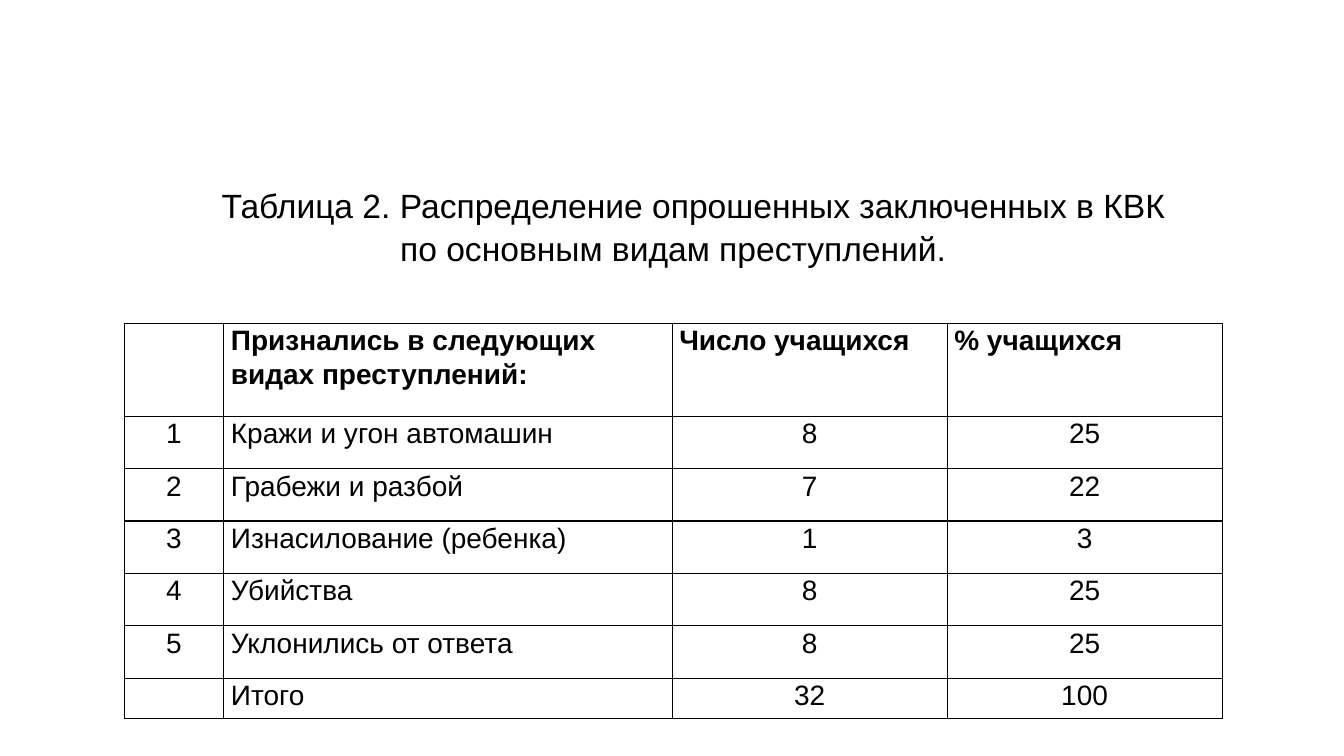
from lxml import etree
from pptx import Presentation
from pptx.dml.color import RGBColor
from pptx.enum.text import MSO_ANCHOR, PP_ALIGN
from pptx.oxml.ns import qn
from pptx.util import Cm, Pt

LEFT, CENTER = PP_ALIGN.LEFT, PP_ALIGN.CENTER
TOP = MSO_ANCHOR.TOP

# Content
TITLE = ("Таблица 2. Распределение опрошенных заключенных в КВК \v"
         "по основным видам преступлений.")
HEADER = ("", "Признались в следующих видах преступлений:",
          "Число учащихся", "% учащихся")
CRIMES = [
    ("1", "Кражи и угон автомашин", "8", "25"),
    ("2", "Грабежи и разбой", "7", "22"),
    ("3", "Изнасилование (ребенка)", "1", "3"),
    ("4", "Убийства", "8", "25"),
    ("5", "Уклонились от ответа", "8", "25"),
]
TOTAL = ("", "Итого", "32", "100")

THEME = {
    "font": "Arial",
    "ink": "000000",
    "title_size": 24,
    "table_size": 20,
    "border": 1,
    "line_spacing": 1.07,
}

# Layout in centimetres
SLIDE_SIZE = (33.87, 19.05)
TITLE_BOX = (2.36, 4.47, 29.21, 3.33)
TITLE_INDENT = 1.25
TABLE_ORIGIN = (3.13, 8.15)
COLUMN_WIDTHS = (2.51, 11.3, 6.93, 6.93)
ROW_HEIGHTS = (2.34, *[1.32] * len(CRIMES), 1.02)
CELL_MARGIN = 0.18


def write(frame, text, *, size, bold=False, align=LEFT, indent=0):
    paragraph = frame.paragraphs[0]
    paragraph.text = text
    paragraph.alignment = align
    paragraph.line_spacing = THEME["line_spacing"]
    if indent:
        paragraph._p.get_or_add_pPr().set("indent", str(Cm(indent)))
    for font in [paragraph.font, *(run.font for run in paragraph.runs)]:
        font.name = THEME["font"]
        font.size = Pt(size)
        font.bold = bold
        font.color.rgb = RGBColor.from_string(THEME["ink"])


def outline(cell):
    properties = cell._tc.get_or_add_tcPr()
    for side in ("a:lnL", "a:lnR", "a:lnT", "a:lnB"):
        line = etree.SubElement(properties, qn(side), w=str(Pt(THEME["border"])))
        fill = etree.SubElement(line, qn("a:solidFill"))
        etree.SubElement(fill, qn("a:srgbClr"), val=THEME["ink"])


def add_title(slide):
    frame = slide.shapes.add_textbox(*map(Cm, TITLE_BOX)).text_frame
    frame.word_wrap = True
    frame.vertical_anchor = TOP
    write(frame, TITLE, size=THEME["title_size"], align=CENTER,
          indent=TITLE_INDENT)


def add_crime_table(slide):
    rows = [HEADER, *CRIMES, TOTAL]
    extent = (sum(COLUMN_WIDTHS), sum(ROW_HEIGHTS))
    table = slide.shapes.add_table(
        len(rows), len(HEADER), *map(Cm, TABLE_ORIGIN + extent)).table
    table.first_row = table.horz_banding = False
    for column, width in zip(table.columns, COLUMN_WIDTHS):
        column.width = Cm(width)
    for row, height in zip(table.rows, ROW_HEIGHTS):
        row.height = Cm(height)

    # Only the names of crimes and the header are left-aligned
    for r, values in enumerate(rows):
        for c, value in enumerate(values):
            cell = table.cell(r, c)
            cell.margin_left = cell.margin_right = Cm(CELL_MARGIN)
            cell.margin_top = cell.margin_bottom = 0
            cell.vertical_anchor = TOP
            outline(cell)
            cell.fill.background()
            write(cell.text_frame, value, size=THEME["table_size"],
                  bold=r == 0, align=LEFT if r == 0 or c == 1 else CENTER)


def main():
    deck = Presentation()
    deck.slide_width, deck.slide_height = map(Cm, SLIDE_SIZE)
    slide = deck.slides.add_slide(deck.slide_layouts[6])
    add_crime_table(slide)
    add_title(slide)
    deck.save("out.pptx")


if __name__ == "__main__":
    main()
